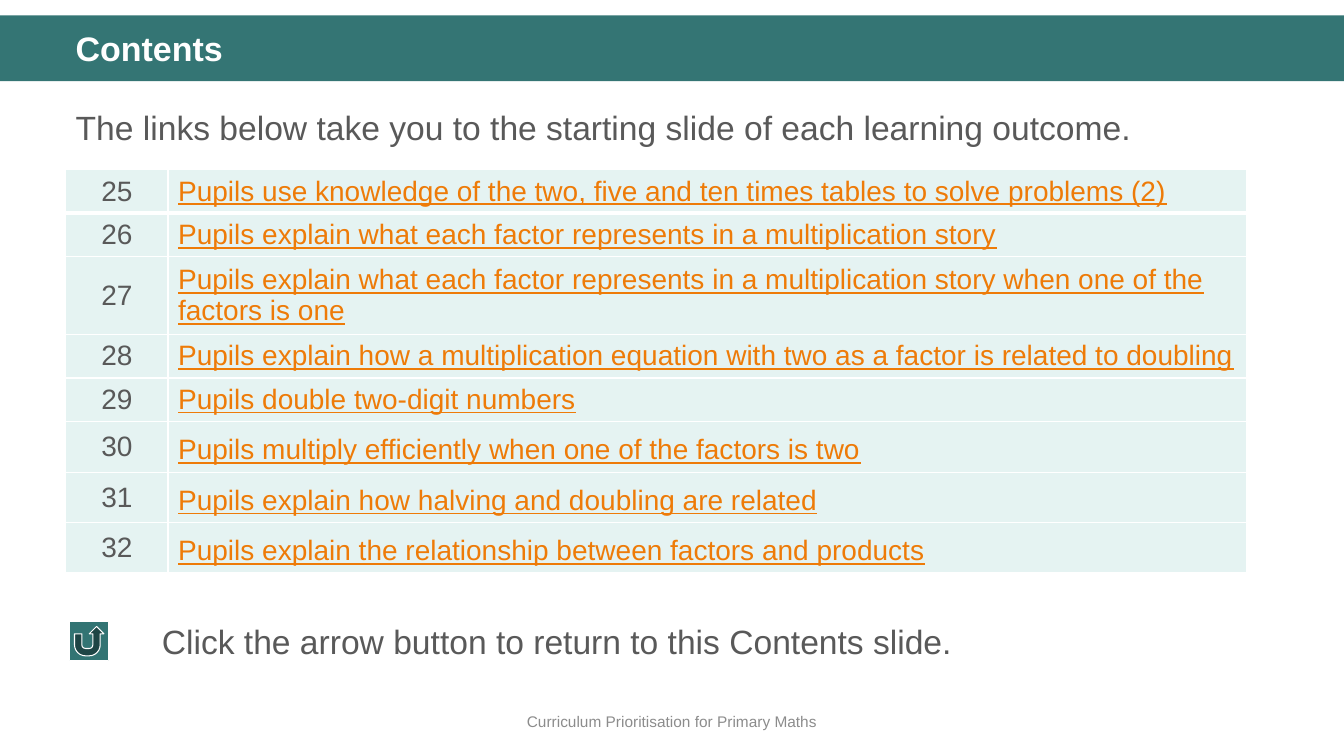
import pptx
import pptx.dml.color
import pptx.enum.shapes
import pptx.enum.text
import pptx.oxml.ns
import pptx.util
from lxml import etree

Pt = pptx.util.Pt
SHAPE = pptx.enum.shapes.MSO_SHAPE
ALIGN = pptx.enum.text.PP_ALIGN
ANCHOR = pptx.enum.text.MSO_ANCHOR
qn = pptx.oxml.ns.qn

OUTCOMES = [
    "Pupils use knowledge of the two, five and ten times tables to solve problems (2)",
    "Pupils explain what each factor represents in a multiplication story",
    "Pupils explain what each factor represents in a multiplication story when one of the factors is one",
    "Pupils explain how a multiplication equation with two as a factor is related to doubling",
    "Pupils double two-digit numbers",
    "Pupils multiply efficiently when one of the factors is two",
    "Pupils explain how halving and doubling are related",
    "Pupils explain the relationship between factors and products",
]
FIRST_NUMBER = 25
ROW_HEIGHTS = [29.5, 29.5, 51.5, 29.5, 29.5, 34, 34, 34]
LOOSE_FROM = 5  # rows from here on have wider line spacing


def rgb(value):
    return pptx.dml.color.RGBColor.from_string(value)


def write(tf, text, size=24, color="595959", bold=False, underline=False,
          align=ALIGN.LEFT, spacing=None):
    p = tf.paragraphs[0]
    p.alignment = align
    if spacing:
        p.line_spacing = spacing
    r = p.add_run()
    r.text = text
    r.font.name = "Arial"
    r.font.size = Pt(size)
    r.font.bold = bold
    r.font.underline = underline
    r.font.color.rgb = rgb(color)


class Deck:
    teal, button_teal = "347574", "327473"
    cell_fill, border, link = "E5F3F2", "FFFFFF", "EE7B08"

    def __init__(self):
        self.prs = pptx.Presentation()
        self.prs.slide_width, self.prs.slide_height = Pt(960), Pt(540)
        self.s = self.prs.slides.add_slide(self.prs.slide_layouts[6])

    def shape(self, kind, x, y, w, h, fill, line=None):
        sp = self.s.shapes.add_shape(kind, Pt(x), Pt(y), Pt(w), Pt(h))
        sp.shadow.inherit = False
        sp.fill.solid()
        sp.fill.fore_color.rgb = rgb(fill)
        if line:
            sp.line.color.rgb = rgb(line)
            sp.line.width = Pt(0.75)
        else:
            sp.line.fill.background()

    def text(self, x, y, w, h, text, anchor=ANCHOR.TOP, **fmt):
        tf = self.s.shapes.add_textbox(Pt(x), Pt(y), Pt(w), Pt(h)).text_frame
        tf.word_wrap = True
        tf.vertical_anchor = anchor
        write(tf, text, **fmt)

    def cell(self, cell, text, widths, **fmt):
        # Borders precede the fill in the cell properties
        tc_pr = cell._tc.get_or_add_tcPr()
        for side, width in zip("LRTB", widths):
            ln = etree.SubElement(tc_pr, qn(f"a:ln{side}"), w=str(Pt(width)))
            fill = etree.SubElement(ln, qn("a:solidFill"))
            etree.SubElement(fill, qn("a:srgbClr"), val=self.border)
        cell.fill.solid()
        cell.fill.fore_color.rgb = rgb(self.cell_fill)
        cell.vertical_anchor = ANCHOR.MIDDLE
        write(cell.text_frame, text, size=20, **fmt)

    def outcomes(self, x, y, col_widths):
        frame = self.s.shapes.add_table(len(OUTCOMES), 2, Pt(x), Pt(y),
                                        Pt(sum(col_widths)), Pt(sum(ROW_HEIGHTS)))
        table = frame.table
        table.first_row = table.horz_banding = False
        for column, width in zip(table.columns, col_widths):
            column.width = Pt(width)
        for i, (outcome, height) in enumerate(zip(OUTCOMES, ROW_HEIGHTS)):
            table.rows[i].height = Pt(height)
            widths = (1, 1, 3 if i == 1 else 1, 3 if i == 0 else 1)
            self.cell(table.cell(i, 0), str(FIRST_NUMBER + i), widths,
                      align=ALIGN.CENTER)
            self.cell(table.cell(i, 1), outcome, widths, color=self.link,
                      underline=True, spacing=1.2 if i >= LOOSE_FROM else None)


def main():
    deck = Deck()

    # Title band and footer
    deck.shape(SHAPE.RECTANGLE, 0, 11, 960, 47, deck.teal)
    deck.text(0, 500.5, 960, 29, "Curriculum Prioritisation for Primary Maths",
              anchor=ANCHOR.MIDDLE, size=11, color="8C8C8C", align=ALIGN.CENTER)

    # Introduction and learning outcomes
    deck.text(47, 67, 877, 252.5,
              "The links below take you to the starting slide of each learning outcome.",
              spacing=1.2)
    deck.outcomes(47, 121, (73, 770.5))

    # Return button and its explanation
    deck.shape(SHAPE.ACTION_BUTTON_RETURN, 49.75, 444, 28, 28,
               deck.button_teal, line="FFFFFF")
    deck.text(108.5, 440, 815, 36,
              "Click the arrow button to return to this Contents slide.")

    # Title
    deck.text(47, 19.5, 877, 34, "Contents", size=24.3, color="FFFFFF",
              bold=True, spacing=0.9)

    deck.prs.save("out.pptx")


if __name__ == "__main__":
    main()
